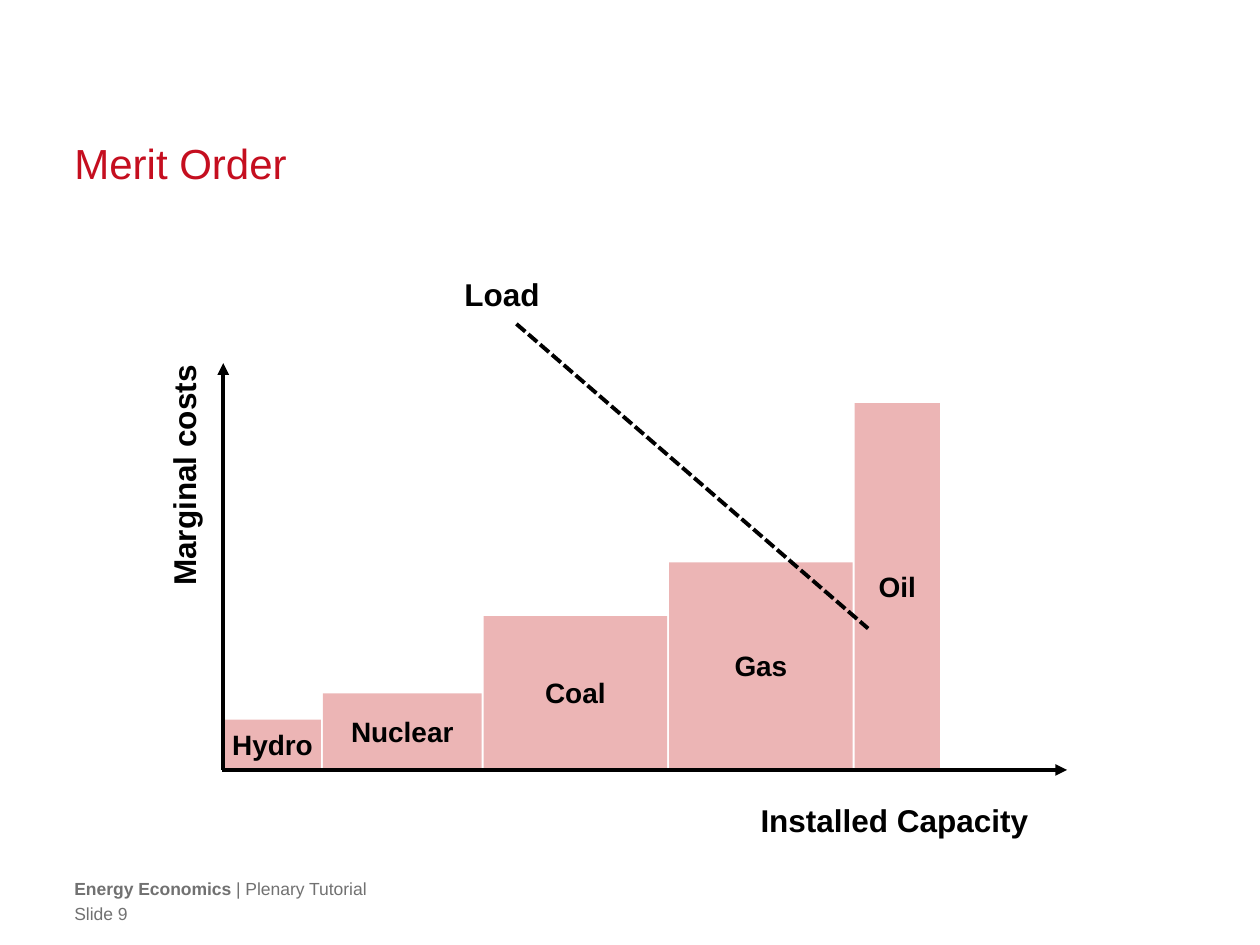
from lxml.etree import SubElement
from pptx import Presentation
from pptx.dml.color import RGBColor
from pptx.enum.dml import MSO_LINE
from pptx.enum.shapes import MSO_CONNECTOR, MSO_SHAPE
from pptx.enum.text import MSO_ANCHOR, PP_ALIGN
from pptx.oxml.ns import qn
from pptx.util import Cm, Pt

BLACK, GREY, RED, DARK = "000000", "717171", "C50E1F", "C00000"
LEFT, WIDE = 1.5, 22.4
BASE, START, GAP = 15.49, 4.52, 0.04
BARS = [  # name, width, height
    ("Hydro", 1.95, 0.98),
    ("Nuclear", 3.2, 1.51),
    ("Coal", 3.7, 3.07),
    ("Gas", 3.7, 4.15),
    ("Oil", 1.72, 7.36),
]


def color(code):
    return RGBColor.from_string(code)


def write(shape, text, size=18, bold=True, ink=BLACK, align=PP_ALIGN.LEFT,
          anchor=MSO_ANCHOR.TOP, wrap=True, inset=None, lead=None, tail=""):
    """Fill a shape with one line; tail follows it in regular weight."""
    frame = shape.text_frame
    frame.word_wrap = wrap
    frame.vertical_anchor = anchor
    if inset is not None:
        frame.margin_left = frame.margin_right = Cm(inset)
        frame.margin_top = frame.margin_bottom = Cm(inset)
    para = frame.paragraphs[0]
    para.alignment = align
    if lead:
        para.line_spacing = Pt(lead)
    for part, heavy in ((text, bold), (tail, False)):
        if part:
            run = para.add_run()
            run.text = part
            font = run.font
            font.name, font.size, font.bold = "Arial", Pt(size), heavy
            font.color.rgb = color(ink)


def label(slide, text, x, y, w, h, turn=0, **style):
    box = slide.shapes.add_textbox(Cm(x), Cm(y), Cm(w), Cm(h))
    box.rotation = turn
    write(box, text, **style)


def bar(slide, name, x, w, h):
    rect = slide.shapes.add_shape(
        MSO_SHAPE.RECTANGLE, Cm(x), Cm(BASE - h), Cm(w), Cm(h))
    rect.shadow.inherit = False
    rect.fill.solid()
    rect.fill.fore_color.rgb = color(DARK)
    tint = rect.fill._xPr.find(".//" + qn("a:srgbClr"))
    SubElement(tint, qn("a:alpha"), val="29000")
    rect.line.fill.background()
    write(rect, name, size=16, align=PP_ALIGN.CENTER,
          anchor=MSO_ANCHOR.MIDDLE, wrap=False)


def line(slide, x1, y1, x2, y2, arrow=False, dash=None):
    link = slide.shapes.add_connector(
        MSO_CONNECTOR.STRAIGHT, Cm(x1), Cm(y1), Cm(x2), Cm(y2))
    link.line.width = Pt(2.25)
    link.line.color.rgb = color(BLACK)
    if dash:
        link.line.dash_style = dash
    if arrow:
        SubElement(link.line._get_or_add_ln(), qn("a:tailEnd"), type="triangle")
    SubElement(link._element.spPr, qn("a:effectLst"))


def main():
    deck = Presentation()
    deck.slide_width, deck.slide_height = Cm(25.4), Cm(19.05)
    slide = deck.slides.add_slide(deck.slide_layouts[6])

    label(slide, "Merit Order", LEFT, 2.74, WIDE, 2.06, size=24, bold=False,
          ink=RED, inset=0, lead=30)
    foot = dict(size=10, ink=GREY, inset=0)
    label(slide, "Energy Economics ", LEFT, 17.7, WIDE, 0.43,
          tail="| Plenary Tutorial", **foot)
    label(slide, "Slide 9", LEFT, 18.21, WIDE, 0.43, bold=False, **foot)

    x = START
    for name, w, h in BARS:
        bar(slide, name, x, w, h)
        x += w + GAP

    right = PP_ALIGN.RIGHT
    label(slide, "Marginal costs", 0.91, 9.4, 5.59, 1.02, turn=270, align=right)
    label(slide, "Installed Capacity", 14.86, 16.03, 6.12, 1.02, align=right)
    line(slide, 4.47, 15.52, 21.51, 15.52, arrow=True)
    line(slide, 4.5, 15.52, 4.5, 7.32, arrow=True)
    line(slide, 10.41, 6.53, 17.5, 12.67, dash=MSO_LINE.SQUARE_DOT)
    label(slide, "Load", 8.97, 5.41, 2.16, 1.02, align=right)

    deck.save("out.pptx")


if __name__ == "__main__":
    main()
